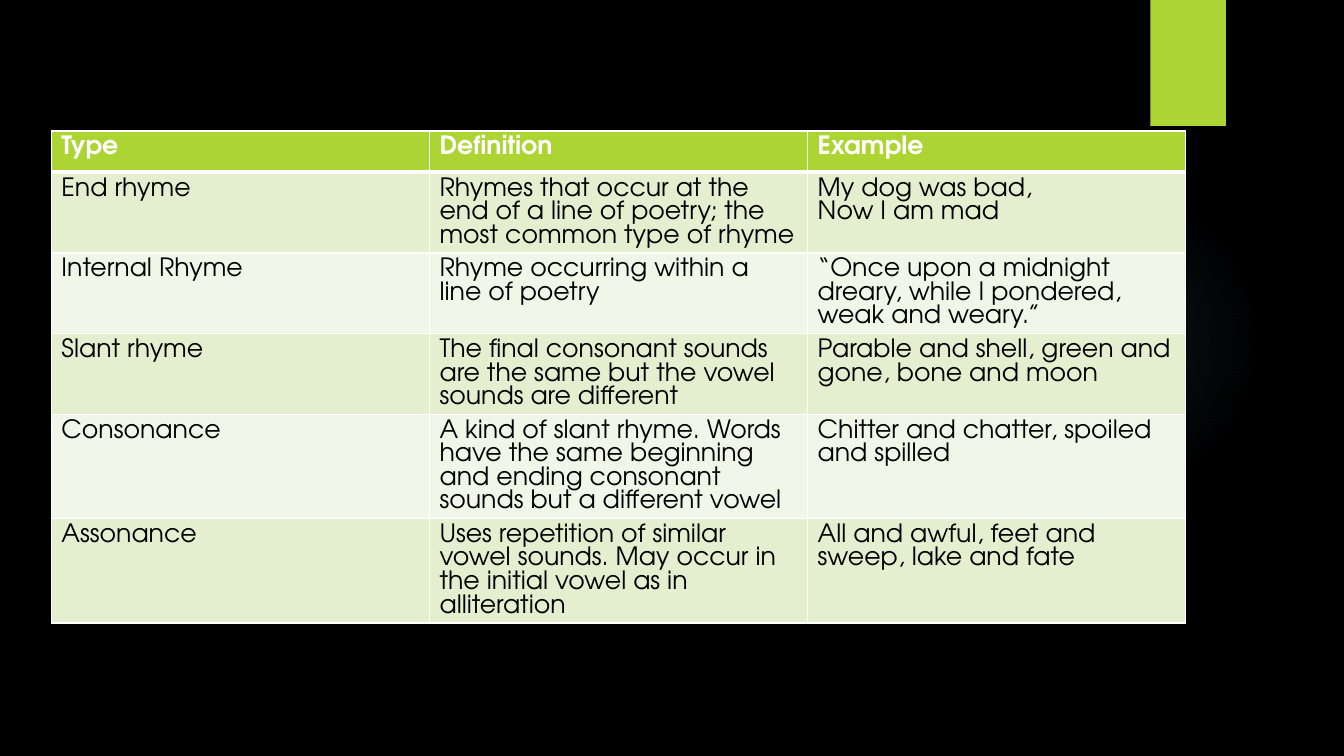
from dataclasses import dataclass

from lxml import etree
from pptx import Presentation
from pptx.dml.color import RGBColor
from pptx.enum.shapes import MSO_SHAPE
from pptx.oxml.ns import qn
from pptx.shapes.autoshape import Shape
from pptx.slide import Slide
from pptx.table import _Cell
from pptx.util import Inches, Pt

RECTANGLE = MSO_SHAPE.RECTANGLE
OVAL = MSO_SHAPE.OVAL


@dataclass(frozen=True)
class Theme:
    background: str = "000000"
    accent: str = "ACD433"
    glow: str = "7AC4F0"
    dark_band: str = "E3EFCE"
    light_band: str = "F1F7E8"
    header_text: str = "FFFFFF"
    body_text: str = "000000"
    border: str = "FFFFFF"
    font: str = "TeX Gyre Adventor"
    text_size: float = 18
    thin_border: float = 1
    thick_border: float = 3


@dataclass(frozen=True)
class Box:
    left: float
    top: float
    width: float
    height: float


@dataclass(frozen=True)
class RhymeType:
    name: str
    definition: str
    example_lines: tuple[str, ...]


THEME = Theme()
GLOW_BOX = Box(9.41, 1.83, 3.08, 3.08)
TAB_BOX = Box(11.41, 0, 0.75, 1.25)
GLOW_STOPS = ((0, 7), (36, 6), (69, 0))
TABLE_LEFT, TABLE_TOP = 0.51, 1.3
COLUMN_WIDTH, ROW_HEIGHT = 3.75, 0.41

HEADER = RhymeType("Type", "Definition", ("Example",))
RHYME_TYPES = (
    RhymeType(
        "End rhyme",
        "Rhymes that occur at the end of a line of poetry; the most common type of rhyme",
        ("My dog was bad,", "Now I am mad"),
    ),
    RhymeType(
        "Internal Rhyme",
        "Rhyme occurring within a line of poetry",
        ("“Once upon a midnight dreary, while I pondered, weak and weary.”",),
    ),
    RhymeType(
        "Slant rhyme",
        "The final consonant sounds are the same but the vowel sounds are different",
        ("Parable and shell, green and gone, bone and moon",),
    ),
    RhymeType(
        "Consonance",
        "A kind of slant rhyme. Words have the same beginning and ending consonant "
        "sounds but a different vowel",
        ("Chitter and chatter, spoiled and spilled",),
    ),
    RhymeType(
        "Assonance",
        "Uses repetition of similar vowel sounds. May occur in the initial vowel as in alliteration",
        ("All and awful, feet and sweep, lake and fate",),
    ),
)


def add_plain_shape(slide: Slide, kind: MSO_SHAPE, box: Box, color: str) -> Shape:
    """Add a filled shape without outline or shadow."""
    shape = slide.shapes.add_shape(
        kind, Inches(box.left), Inches(box.top), Inches(box.width), Inches(box.height)
    )
    shape.shadow.inherit = False
    shape.fill.solid()
    shape.fill.fore_color.rgb = RGBColor.from_string(color)
    shape.line.fill.background()
    return shape


def apply_glow(shape: Shape) -> None:
    """Replace the solid fill with a circular gradient that fades out."""
    properties = shape._element.spPr
    solid = properties.find(qn("a:solidFill"))
    gradient = etree.Element(qn("a:gradFill"), rotWithShape="1")
    stops = etree.SubElement(gradient, qn("a:gsLst"))
    for position, opacity in GLOW_STOPS:
        stop = etree.SubElement(stops, qn("a:gs"), pos=str(position * 1000))
        color = etree.SubElement(stop, qn("a:srgbClr"), val=THEME.glow)
        etree.SubElement(color, qn("a:alpha"), val=str(opacity * 1000))
    circle = etree.SubElement(gradient, qn("a:path"), path="circle")
    sides = dict.fromkeys("ltrb", "50000")
    etree.SubElement(circle, qn("a:fillToRect"), **sides)
    properties.replace(solid, gradient)


def set_borders(cell: _Cell, top: float, bottom: float) -> None:
    """Draw the four borders of a cell, with widths in points."""
    properties = cell._tc.get_or_add_tcPr()
    thin = THEME.thin_border
    for side, width in (("L", thin), ("R", thin), ("T", top), ("B", bottom)):
        line = etree.SubElement(properties, qn(f"a:ln{side}"), w=str(Pt(width)))
        fill = etree.SubElement(line, qn("a:solidFill"))
        etree.SubElement(fill, qn("a:srgbClr"), val=THEME.border)


def write_cell(cell: _Cell, lines: tuple[str, ...], color: str, bold: bool) -> None:
    """Write one paragraph with one run for each line."""
    frame = cell.text_frame
    for index, line in enumerate(lines):
        paragraph = frame.add_paragraph() if index else frame.paragraphs[0]
        run = paragraph.add_run()
        run.text = line
        run.font.name = THEME.font
        run.font.size = Pt(THEME.text_size)
        run.font.bold = bold
        run.font.color.rgb = RGBColor.from_string(color)


def add_rhyme_table(slide: Slide) -> None:
    """Add the table of rhyme types with a header and banded rows."""
    entries = (HEADER, *RHYME_TYPES)
    table = slide.shapes.add_table(
        len(entries), 3, Inches(TABLE_LEFT), Inches(TABLE_TOP),
        Inches(3 * COLUMN_WIDTH), Inches(len(entries) * ROW_HEIGHT),
    ).table
    for row, entry in enumerate(entries):
        is_header = row == 0
        band = THEME.dark_band if row % 2 else THEME.light_band
        fill = THEME.accent if is_header else band
        color = THEME.header_text if is_header else THEME.body_text
        top = THEME.thick_border if row == 1 else THEME.thin_border
        bottom = THEME.thick_border if is_header else THEME.thin_border
        contents = ((entry.name,), (entry.definition,), entry.example_lines)
        for column, lines in enumerate(contents):
            cell = table.cell(row, column)
            set_borders(cell, top, bottom)
            cell.fill.solid()
            cell.fill.fore_color.rgb = RGBColor.from_string(fill)
            write_cell(cell, lines, color, is_header)


def main() -> None:
    """Build the slide and save the presentation."""
    presentation = Presentation()
    presentation.slide_width = Inches(13.33)
    presentation.slide_height = Inches(7.5)
    slide = presentation.slides.add_slide(presentation.slide_layouts[6])
    slide.background.fill.solid()
    slide.background.fill.fore_color.rgb = RGBColor.from_string(THEME.background)
    apply_glow(add_plain_shape(slide, OVAL, GLOW_BOX, THEME.glow))
    add_plain_shape(slide, RECTANGLE, TAB_BOX, THEME.accent)
    add_rhyme_table(slide)
    presentation.save("out.pptx")


if __name__ == "__main__":
    main()
